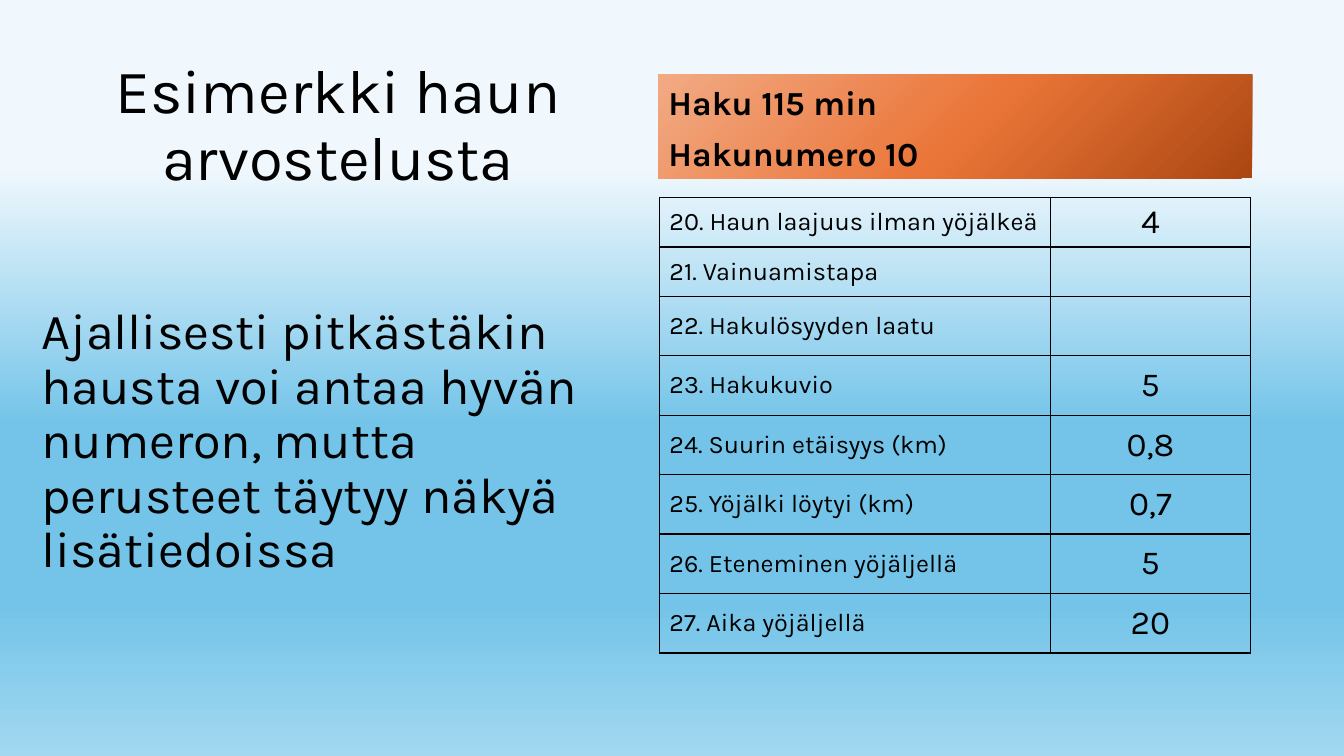
from copy import deepcopy
from dataclasses import dataclass

from lxml import etree
from pptx import Presentation
from pptx.dml.color import RGBColor
from pptx.enum import text
from pptx.oxml import ns
from pptx.util import Inches, Pt

FONT = "Karla"
BLACK = RGBColor(0x00, 0x00, 0x00)
MIST = RGBColor(0xF0, 0xF8, 0xFD)
SKY = RGBColor(0x74, 0xC4, 0xE9)
PALE_SKY = RGBColor(0xA2, 0xD8, 0xF0)
RUST = RGBColor(0xAB, 0x47, 0x12)
ORANGE = RGBColor(0xEA, 0x75, 0x38)
PEACH = RGBColor(0xF2, 0xAA, 0x84)

LEFT, CENTER = text.PP_ALIGN.LEFT, text.PP_ALIGN.CENTER
TOP, MIDDLE, BOTTOM = (text.MSO_ANCHOR.TOP, text.MSO_ANCHOR.MIDDLE,
                       text.MSO_ANCHOR.BOTTOM)


@dataclass
class TextBlock:
    placeholder: int
    place: tuple[float, float, float, float]
    lines: list[str]
    size: int
    anchor: text.MSO_ANCHOR
    align: text.PP_ALIGN = LEFT
    bold: bool = False
    space_before: int = 10


@dataclass
class ScoreRow:
    label: str
    score: str
    height: float = 0.59


BLOCKS = [
    TextBlock(0, (0.47, 0.3, 5.77, 1.92), ["Esimerkki haun arvostelusta"],
              44, MIDDLE, CENTER, space_before=0),
    TextBlock(1, (0.31, 2.99, 6.09, 4.03),
              ["Ajallisesti pitkästäkin hausta voi antaa hyvän numeron, "
               "mutta perusteet täytyy näkyä lisätiedoissa"], 36, TOP),
    TextBlock(3, (6.53, 0.74, 5.89, 1.03),
              ["Haku 115 min", "Hakunumero 10"], 24, BOTTOM, bold=True),
]
SCORES = [
    ScoreRow("20. Haun laajuus ilman yöjälkeä", "4", 0.49),
    ScoreRow("21. Vainuamistapa", "", 0.49),
    ScoreRow("22. Hakulösyyden laatu", ""),
    ScoreRow("23. Hakukuvio", "5"),
    ScoreRow("24. Suurin etäisyys (km)", "0,8"),
    ScoreRow("25. Yöjälki löytyi (km)", "0,7"),
    ScoreRow("26. Eteneminen yöjäljellä", "5"),
    ScoreRow("27. Aika yöjäljellä", "20"),
]
COLUMN_WIDTHS = (3.88, 1.98)


def style_paragraph(para, size: int, align: text.PP_ALIGN, bold: bool = False) -> None:
    para.alignment = align
    para.font.name = FONT
    para.font.size = Pt(size)
    para.font.bold = bold
    para.font.color.rgb = BLACK


def set_gradient(fill, element, angle: int, colors: list[tuple[float, RGBColor]]) -> None:
    """Fill with the given stops; the angle runs counter-clockwise."""
    fill.gradient()
    fill.gradient_angle = angle
    stop_list = next(element.iter(ns.qn("a:gsLst")))
    while len(stop_list) < len(colors):
        stop_list.append(deepcopy(stop_list[0]))
    for stop, (position, color) in zip(fill.gradient_stops, colors):
        stop.position = position
        stop.color.rgb = color


def fill_placeholder(box, block: TextBlock) -> None:
    box.left, box.top, box.width, box.height = map(Inches, block.place)
    frame = box.text_frame
    frame.text = "\n".join(block.lines)
    frame.word_wrap = True
    frame.auto_size = text.MSO_AUTO_SIZE.NONE
    frame.vertical_anchor = block.anchor
    for para in frame.paragraphs:
        style_paragraph(para, block.size, block.align, block.bold)
        para.line_spacing = 0.9
        para.space_before = Pt(block.space_before)


def add_borders(cell) -> None:
    properties = cell._tc.get_or_add_tcPr()
    for index, side in enumerate(("lnL", "lnR", "lnT", "lnB")):
        line = etree.Element(ns.qn(f"a:{side}"), w=str(Pt(1)))
        solid = etree.SubElement(line, ns.qn("a:solidFill"))
        etree.SubElement(solid, ns.qn("a:srgbClr"), val=str(BLACK))
        properties.insert(index, line)


def fill_cell(cell, words: str, size: int, align: text.PP_ALIGN) -> None:
    cell.fill.background()
    cell.vertical_anchor = MIDDLE
    cell.text = words
    style_paragraph(cell.text_frame.paragraphs[0], size, align)
    add_borders(cell)


def add_score_table(page) -> None:
    height = sum(row.height for row in SCORES)
    frame = page.shapes.add_table(len(SCORES), len(COLUMN_WIDTHS), Inches(6.54),
                                  Inches(1.96), Inches(sum(COLUMN_WIDTHS)), Inches(height))
    table = frame.table
    table.first_row = table.horz_banding = False
    for column, width in zip(table.columns, COLUMN_WIDTHS):
        column.width = Inches(width)
    for index, row in enumerate(SCORES):
        table.rows[index].height = Inches(row.height)
        fill_cell(table.cell(index, 0), row.label, 18, LEFT)
        fill_cell(table.cell(index, 1), row.score, 24, CENTER)


def main() -> None:
    deck = Presentation()
    deck.slide_width, deck.slide_height = Inches(13.33), Inches(7.5)
    page = deck.slides.add_slide(deck.slide_layouts.get_by_name("Comparison"))

    # Background
    set_gradient(page.background.fill, page._element, 270,
                 [(0.22, MIST), (0.56, SKY), (0.8, SKY), (1, PALE_SKY)])

    # Title, explanation and search heading
    boxes = {box.placeholder_format.idx: box for box in page.placeholders}
    for block in BLOCKS:
        fill_placeholder(boxes.pop(block.placeholder), block)
    for unused in boxes.values():
        unused._element.getparent().remove(unused._element)
    heading = page.placeholders[3]
    set_gradient(heading.fill, heading._element, 135,
                 [(0, RUST), (0.48, ORANGE), (1, PEACH)])

    # Scores
    add_score_table(page)
    deck.save("out.pptx")


if __name__ == "__main__":
    main()
